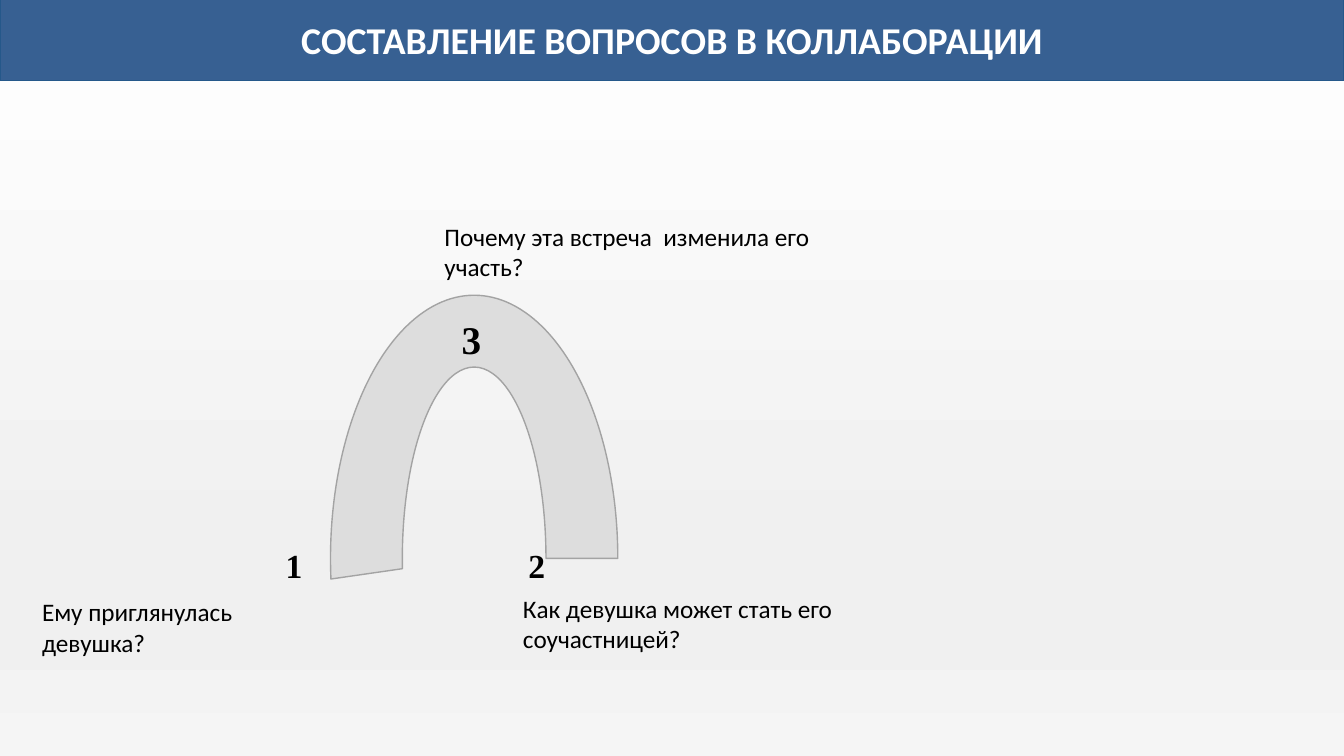
from lxml import etree
from pptx import Presentation
from pptx.dml.color import RGBColor
from pptx.enum.shapes import MSO_SHAPE
from pptx.enum.text import MSO_ANCHOR, PP_ALIGN
from pptx.oxml.ns import qn
from pptx.util import Cm, Pt

RECTANGLE, ARC = MSO_SHAPE.RECTANGLE, MSO_SHAPE.BLOCK_ARC
MIDDLE, TOP = MSO_ANCHOR.MIDDLE, MSO_ANCHOR.TOP
CENTER, LEFT = PP_ALIGN.CENTER, PP_ALIGN.LEFT

COLORS = {
    "header": "376092", "header_line": "25588A", "title": "FFFFFF",
    "arc": "DDDDDD", "arc_line": "A3A3A3", "text": "000000",
}
BACKGROUND = [(0, "FFFFFF"), (74, "F0F0F0"), (83, "F0F0F0"), (100, "F5F5F5")]
WIDTH, HEIGHT = 33.87, 19.05

TITLE = "СОСТАВЛЕНИЕ ВОПРОСОВ В КОЛЛАБОРАЦИИ"
# text, left, top, width in cm
QUESTIONS = [
    ("Ему приглянулась девушка?", 0.81, 14.91, 6.55),
    ("Как девушка может стать его соучастницей?", 12.93, 14.83, 9.25),
    ("Почему эта встреча  изменила его участь?", 10.95, 5.44, 9.98),
]
QUESTION_HEIGHT = 1.8
# text, centre x, centre y in cm, size in points
NUMBERS = [("1", 7.41, 14.25, 24), ("2", 13.53, 14.25, 24), ("3", 11.88, 8.53, 28)]
NUMBER_SIDE = 1.6


def paint_background(page):
    fill = page.background.fill
    fill.gradient()
    fill.gradient_angle = 270
    stops = page.background._cSld.find(".//" + qn("a:gsLst"))
    for stop in list(stops):
        stops.remove(stop)
    for position, color in BACKGROUND:
        stop = etree.SubElement(stops, qn("a:gs"), pos=str(position * 1000))
        etree.SubElement(stop, qn("a:srgbClr"), val=color)


def add_figure(page, kind, place, fill, line):
    figure = page.shapes.add_shape(kind, *map(Cm, place))
    figure.shadow.inherit = False
    figure.fill.solid()
    figure.fill.fore_color.rgb = RGBColor.from_string(COLORS[fill])
    figure.line.color.rgb = RGBColor.from_string(COLORS[line])
    figure.line.width = Pt(1)
    return figure


def write(box, text, size=18, font="Calibri", color="text", bold=False,
          align=LEFT, anchor=TOP):
    frame = box.text_frame
    frame.word_wrap = True
    frame.vertical_anchor = anchor
    para = frame.paragraphs[0]
    para.alignment = align
    span = para.add_run()
    span.text = text
    span.font.size = Pt(size)
    span.font.name = font
    span.font.bold = bold
    span.font.color.rgb = RGBColor.from_string(COLORS[color])


def main():
    deck = Presentation()
    deck.slide_width, deck.slide_height = Cm(WIDTH), Cm(HEIGHT)
    page = deck.slides.add_slide(deck.slide_layouts[6])
    paint_background(page)

    header = add_figure(page, RECTANGLE, (0, -0.05, WIDTH, 2.08), "header", "header_line")
    write(header, TITLE, size=27, color="title", bold=True, align=CENTER, anchor=MIDDLE)

    arc = add_figure(page, ARC, (8.33, 7.44, 7.24, 13.26), "arc", "arc_line")
    for index, value in enumerate((103.07, 0, 0.25)):
        arc.adjustments[index] = value

    for text, x, y, size in NUMBERS:
        place = (x - NUMBER_SIDE / 2, y - NUMBER_SIDE / 2, NUMBER_SIDE, NUMBER_SIDE)
        box = page.shapes.add_textbox(*map(Cm, place))
        write(box, text, size=size, font="Times New Roman", bold=True,
              align=CENTER, anchor=MIDDLE)

    for text, left, top, width in QUESTIONS:
        box = page.shapes.add_textbox(*map(Cm, (left, top, width, QUESTION_HEIGHT)))
        write(box, text)

    deck.save("out.pptx")


if __name__ == "__main__":
    main()
